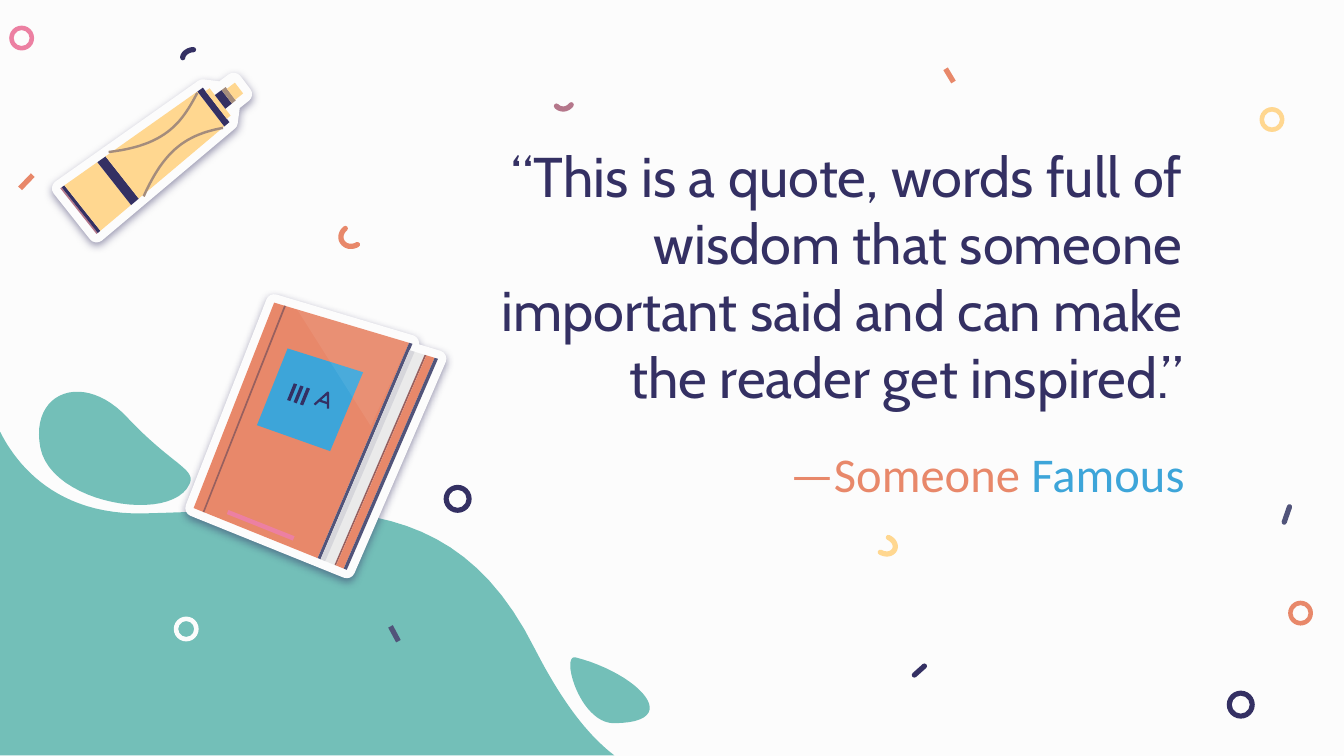
from dataclasses import dataclass

from lxml import etree
from pptx import Presentation
from pptx import util as u
from pptx.dml import color
from pptx.enum import shapes, text
from pptx.oxml import ns


@dataclass(frozen=True)
class Theme:
    paper: str = "FCFCFC"
    navy: str = "343063"
    slate: str = "51547A"
    taupe: str = "A48C7C"
    crease: str = "97605F"
    coral: str = "E8886A"
    yellow: str = "FFD790"
    pink: str = "EC80A2"
    mauve: str = "B5778B"
    teal: str = "73BFB8"
    sky: str = "3DA5D9"
    page: str = "EAEAEA"
    shade: str = "D6D6DB"
    quote_font: str = "Cabin"
    quote_size: int = 30
    author_font: str = "Calibri"
    author_size: int = 26
    stroke: float = 2.8


@dataclass(frozen=True)
class Box:
    left: int
    top: int
    width: int
    height: int


THEME = Theme()

# Outlines: a pair is a corner, a six-tuple is a Bezier curve
HILL = [(457, 292), (436, 276, 417, 250, 398, 213), (336, 89, 240, 109, 106, 112),
        (43, 113, 13, 77, 0, 51), (0, 292)]
DROPS = [[(428, 219), (417, 217, 431, 267, 456, 268), (510, 268, 475, 231, 428, 219)],
         [(141, 90), (128, 120, 38, 105, 30, 63), (22, 21, 63, 6, 95, 41), (128, 76, 146, 79, 141, 90)]]

# Confetti in cm: ring centres, dash ends; curls on a grid 1000 wide
RINGS = [(THEME.navy, 23.45, 13.32), (THEME.yellow, 24.04, 2.26), (THEME.pink, 0.41, 0.72),
         (THEME.coral, 24.58, 11.59), (THEME.paper, 3.52, 11.89), (THEME.navy, 8.65, 9.43)]
DASHES = [(THEME.slate, "rnd", 24.27, 9.87, 24.37, 9.58), (THEME.coral, "flat", 0.38, 3.56, 0.62, 3.31),
          (THEME.navy, "rnd", 17.28, 12.76, 17.47, 12.59), (THEME.coral, "flat", 17.87, 1.3, 18.02, 1.55),
          (THEME.slate, "flat", 7.38, 11.84, 7.53, 12.12)]
CURLS = [(THEME.navy, [(136, 43), (136, 40, 140, 37, 144, 37)]),
         (THEME.yellow, [(661, 400), (671, 405, 665, 416, 655, 411)]),
         (THEME.coral, [(266, 182), (257, 187, 249, 177, 257, 170)]),
         (THEME.mauve, [(414, 79), (417, 82, 422, 82, 425, 78)])]


def rgb(value):
    return color.RGBColor.from_string(value)


def blend(start, end, share):
    return tuple(a + (b - a) * share for a, b in zip(start, end))


def make_grid(near_start, near_end, far_start, far_end):
    """Return a function that finds the point at shares along and across a four-sided body."""
    return lambda along, across: blend(blend(near_start, near_end, along),
                                       blend(far_start, far_end, along), across)


def patch(grid, start, end, near=0, far=1):
    return [grid(start, near), grid(end, near), grid(end, far), grid(start, far)]


def flatten(outline, steps=24):
    """Turn corners and curves into a list of points."""
    points = [outline[0]]
    for part in outline[1:]:
        if len(part) == 2:
            points.append(part)
            continue
        first, second, third, last = points[-1], part[:2], part[2:4], part[4:]
        for step in range(1, steps + 1):
            t = step / steps
            middle = blend(second, third, t)
            points.append(blend(blend(blend(first, second, t), middle, t),
                                blend(middle, blend(third, last, t), t), t))
    return points


def add_outline(parent, box, columns, outline, fill=None, opacity=100):
    """Draw a filled outline, or an open one if there is no fill."""
    unit = box.width / columns
    points = [(box.left + x * unit, box.top + y * unit) for x, y in flatten(outline)]
    builder = parent.build_freeform(*points[0], scale=1.0)
    builder.add_line_segments(points[1:], close=fill is not None)
    shape = builder.convert_to_shape()
    shape.shadow.inherit = False
    shape.line.fill.background()
    if fill is None:
        shape.fill.background()
        return shape
    shape.fill.solid()
    shape.fill.fore_color.rgb = rgb(fill)
    if opacity < 100:
        add_alpha(shape.element.spPr.find(f"{ns.qn('a:solidFill')}/{ns.qn('a:srgbClr')}"), opacity)
    return shape


def add_alpha(tint, opacity):
    etree.SubElement(tint, ns.qn("a:alpha"), val=f"{opacity}000")


def set_line(shape, value, width, cap="rnd"):
    shape.line.color.rgb = rgb(value)
    shape.line.width = u.Pt(width)
    line = shape.element.spPr.find(ns.qn("a:ln"))
    line.set("cap", cap)
    etree.SubElement(line, ns.qn("a:round"))


def add_sticker(parent, box, columns, outline):
    """Draw the white border with its soft shadow."""
    sticker = add_outline(parent, box, columns, outline, THEME.paper)
    set_line(sticker, THEME.paper, 9)
    effects = sticker.element.spPr.find(ns.qn("a:effectLst"))
    shadow = etree.SubElement(effects, ns.qn("a:outerShdw"), blurRad=str(u.Pt(4.5)),
                              dist=str(u.Pt(1.5)), dir="5400000", algn="bl", rotWithShape="0")
    add_alpha(etree.SubElement(shadow, ns.qn("a:srgbClr"), val=THEME.navy), 50)


def add_splash(slide, box):
    group = slide.shapes.add_group_shape().shapes
    for outline in [HILL, *DROPS]:
        add_outline(group, box, 488, outline, THEME.teal)


def add_book(slide, box):
    columns = 184
    group = slide.shapes.add_group_shape().shapes
    grid = make_grid((60, 0), (184, 37), (0, 153), (114, 199))
    cover, back_top = 0.82, 0.03
    add_sticker(group, box, columns, [grid(0, 0), grid(cover, 0), grid(cover, back_top),
                                      grid(1, back_top), grid(1, 1), grid(0, 1)])
    # Strips from the spine to the back cover
    strips = [(THEME.coral, 0, 0.81, 0), (THEME.crease, 0.06, 0.07, 0), (THEME.slate, 0.81, 0.83, 0),
              (THEME.page, 0.83, 0.92, back_top), (THEME.shade, 0.83, 0.86, back_top),
              (THEME.crease, 0.92, 0.93, back_top), (THEME.coral, 0.93, 0.98, back_top),
              (THEME.slate, 0.98, 1, back_top)]
    for fill, start, end, top in strips:
        add_outline(group, box, columns, patch(grid, start, end, top), fill)
    # Label and lettering
    add_outline(group, box, columns, patch(grid, 0.17, 0.63, 0.18, 0.55), THEME.sky)
    for stroke in range(3):
        start = 0.28 + 0.04 * stroke
        add_outline(group, box, columns, patch(grid, start, start + 0.02, 0.32, 0.4), THEME.navy)
    for outline in ([(90, 76), (100, 67), (100, 79)], [(94, 73), (100, 75)]):
        set_line(add_outline(group, box, columns, outline), THEME.navy, 1.2, "flat")
    # Ribbon and gloss
    add_outline(group, box, columns, patch(grid, 0.2, 0.63, 0.95, 0.97), THEME.pink)
    add_outline(group, box, columns, [(77, 5), (132, 92), (161, 28)], THEME.paper, 7)


def add_marker(slide, box):
    columns = 137
    group = slide.shapes.add_group_shape().shapes
    grid = make_grid((0, 76), (102, 4), (27, 110), (122, 30))
    upper = [grid(0, 0), grid(1.04, 0), grid(1.12, 0.3), grid(1.21, 0.3)]
    lower = [grid(1.21, 0.7), grid(1.12, 0.7), grid(1.04, 1), grid(0, 1)]
    add_sticker(group, box, columns, upper + lower)
    # Strips from the base to the tip
    strips = [(THEME.mauve, 0, 0.01, 0, 1), (THEME.navy, 0.01, 0.03, 0, 1),
              (THEME.yellow, 0.03, 0.27, 0, 1), (THEME.navy, 0.27, 0.33, 0, 1),
              (THEME.yellow, 0.33, 1, 0, 1), (THEME.navy, 1, 1.04, 0, 1),
              (THEME.yellow, 1.04, 1.07, 0.1, 0.9), (THEME.navy, 1.07, 1.12, 0.3, 0.7),
              (THEME.taupe, 1.12, 1.15, 0.3, 0.7), (THEME.yellow, 1.15, 1.21, 0.35, 0.68)]
    for fill, *place in strips:
        add_outline(group, box, columns, patch(grid, *place), fill)
    # Curved stripes on the barrel
    for outline in ([(62, 82), (78, 46, 95, 36, 121, 31)], [(36, 49), (78, 44, 90, 28, 102, 5)]):
        set_line(add_outline(group, box, columns, outline), THEME.taupe, 1.3, "flat")


def add_confetti(slide, box):
    for fill, x, y in RINGS:
        size = 0.53 if fill == THEME.navy else 0.47
        ring = slide.shapes.add_shape(shapes.MSO_SHAPE.DONUT, box.left + u.Cm(x - size / 2),
                                      box.top + u.Cm(y - size / 2), u.Cm(size), u.Cm(size))
        ring.adjustments[0] = 0.18
        ring.shadow.inherit = False
        ring.fill.solid()
        ring.fill.fore_color.rgb = rgb(fill)
        ring.line.fill.background()
    for value, cap, x1, y1, x2, y2 in DASHES:
        dash = slide.shapes.add_connector(shapes.MSO_CONNECTOR.STRAIGHT, box.left + u.Cm(x1),
                                          box.top + u.Cm(y1), box.left + u.Cm(x2), box.top + u.Cm(y2))
        set_line(dash, value, THEME.stroke, cap)
        etree.SubElement(dash.element.spPr, ns.qn("a:effectLst"))
    for value, outline in CURLS:
        set_line(add_outline(slide.shapes, box, 1000, outline), value, THEME.stroke)


def write_text(shape, box, runs, font, size):
    shape.left, shape.top, shape.width, shape.height = box.left, box.top, box.width, box.height
    frame = shape.text_frame
    frame.word_wrap = True
    frame.auto_size = text.MSO_AUTO_SIZE.NONE
    frame.vertical_anchor = text.MSO_ANCHOR.MIDDLE
    frame.margin_left = frame.margin_right = frame.margin_top = frame.margin_bottom = u.Cm(0.25)
    paragraph = frame.paragraphs[0]
    paragraph.alignment = text.PP_ALIGN.RIGHT
    for words, value in runs:
        run = paragraph.add_run()
        run.text = words
        run.font.name = font
        run.font.size = u.Pt(size)
        run.font.color.rgb = rgb(value)


def add_quote(slide, box):
    """Place the quotation, with its author in the title placeholder below."""
    quote = slide.shapes.add_textbox(box.left, box.top, box.width, box.height)
    write_text(quote, Box(box.left, box.top, box.width, u.Cm(5.44)),
               [("“This is a quote, words full of wisdom that someone important said "
                 "and can make the reader get inspired.”", THEME.navy)],
               THEME.quote_font, THEME.quote_size)
    author = Box(box.left + u.Cm(2.19), box.top + u.Cm(5.71), u.Cm(12.12), u.Cm(1.47))
    write_text(slide.shapes.title, author, [("—Someone ", THEME.coral), ("Famous", THEME.sky)],
               THEME.author_font, THEME.author_size)


def main():
    presentation = Presentation()
    presentation.slide_width, presentation.slide_height = u.Cm(25.4), u.Cm(14.29)
    slide = presentation.slides.add_slide(presentation.slide_layouts[5])
    slide.background.fill.solid()
    slide.background.fill.fore_color.rgb = rgb(THEME.paper)
    add_splash(slide, Box(0, u.Cm(6.86), u.Cm(12.4), u.Cm(7.43)))
    add_quote(slide, Box(u.Cm(8.33), u.Cm(2.49), u.Cm(14.27), u.Cm(7.18)))
    add_book(slide, Box(u.Cm(3.66), u.Cm(5.72), u.Cm(4.67), u.Cm(5.05)))
    add_marker(slide, Box(u.Cm(1.14), u.Cm(1.63), u.Cm(3.48), u.Cm(2.79)))
    add_confetti(slide, Box(0, 0, presentation.slide_width, presentation.slide_height))
    presentation.save("out.pptx")


if __name__ == "__main__":
    main()
